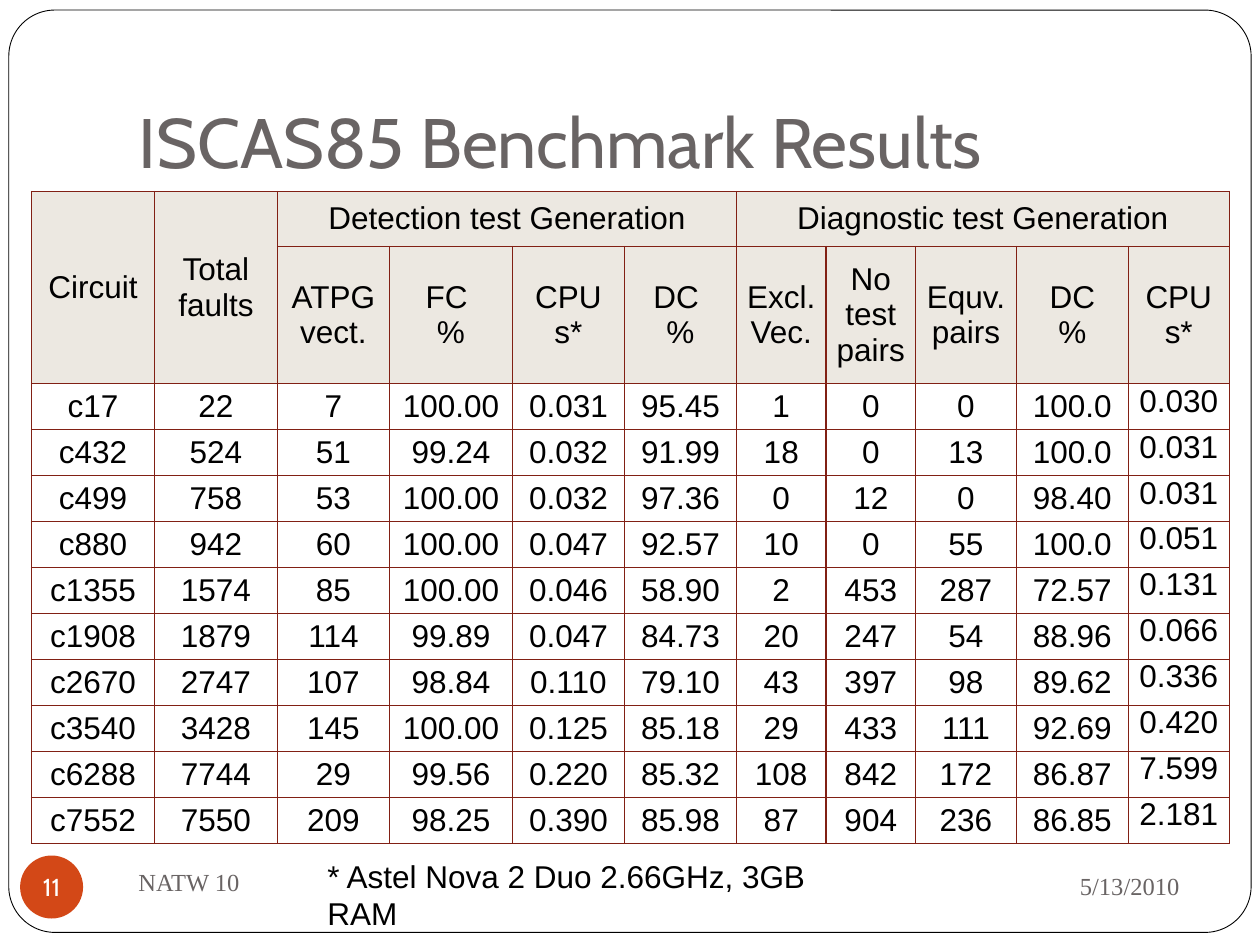
from pptx import Presentation
from pptx.dml.color import RGBColor
from pptx.enum.shapes import MSO_SHAPE
from pptx.enum.text import MSO_ANCHOR, PP_ALIGN
from pptx.oxml import parse_xml
from pptx.oxml.ns import nsdecls
from pptx.util import Emu, Pt

COLS, ROWS = 100, 75
WIDTHS = [9.76, 9.76, 8.89, 9.76, 8.89, 8.89, 7.11, 7.11, 8, 8.89, 8]
HEIGHTS = [4.37, 10.87] + [3.65] * 10
GROUPS = [
    (0, 0, 1, 0, "Circuit"),
    (0, 1, 1, 1, "Total\nfaults"),
    (0, 2, 0, 5, "Detection test Generation"),
    (0, 6, 0, 10, "Diagnostic test Generation"),
]
HEADS = ["ATPG\vvect.", "FC \n%", "CPU\ns*", "DC \n%", "Excl.\nVec.",
         "No test\npairs", "Equv.\npairs", "DC\n%", "CPU s*"]
RESULTS = """
c17 22 7 100.00 0.031 95.45 1 0 0 100.0 0.030
c432 524 51 99.24 0.032 91.99 18 0 13 100.0 0.031
c499 758 53 100.00 0.032 97.36 0 12 0 98.40 0.031
c880 942 60 100.00 0.047 92.57 10 0 55 100.0 0.051
c1355 1574 85 100.00 0.046 58.90 2 453 287 72.57 0.131
c1908 1879 114 99.89 0.047 84.73 20 247 54 88.96 0.066
c2670 2747 107 98.84 0.110 79.10 43 397 98 89.62 0.336
c3540 3428 145 100.00 0.125 85.18 29 433 111 92.69 0.420
c6288 7744 29 99.56 0.220 85.32 108 842 172 86.87 7.599
c7552 7550 209 98.25 0.390 85.98 87 904 236 86.85 2.181
"""


def paint(hue):
    return RGBColor.from_string(hue)


class Deck:
    gray, black, white = "696464", "000000", "FFFFFF"
    accent, rule, shade = "D34817", "812014", "ECE8E1"
    sans, serif, display = "Arial", "Times New Roman", "Cabin"

    def __init__(self):
        self.show = Presentation()
        self.show.slide_width = Emu(9144000)
        self.show.slide_height = Emu(6858000)
        self.slide = self.show.slides.add_slide(self.show.slide_layouts[5])
        self.shapes = self.slide.shapes

    def across(self, cols):
        return Emu(round(self.show.slide_width * cols / COLS))

    def down(self, rows):
        return Emu(round(self.show.slide_height * rows / ROWS))

    def box(self, left, top, width, height):
        return (self.across(left), self.down(top),
                self.across(width), self.down(height))

    def letter(self, frame, text, size, font, hue, align=PP_ALIGN.LEFT):
        frame.text = text
        for para in frame.paragraphs:
            para.alignment = align
            for run in para.runs:
                run.font.size = Pt(size)
                run.font.name = font
                run.font.color.rgb = paint(hue)

    def shape(self, kind, place, fill, line=None):
        item = self.shapes.add_shape(kind, *self.box(*place))
        item.shadow.inherit = False
        item.fill.solid()
        item.fill.fore_color.rgb = paint(fill)
        if line:
            item.line.color.rgb = paint(line)
            item.line.width = Pt(0.5)
        else:
            item.line.fill.background()
        return item

    def frame(self, place):
        item = self.shape(MSO_SHAPE.ROUNDED_RECTANGLE, place,
                          self.white, self.black)
        item.adjustments[0] = 0.05

    def title(self, place, text):
        item = self.shapes.title
        item.left, item.top, item.width, item.height = self.box(*place)
        frame = item.text_frame
        frame.word_wrap = True
        frame.vertical_anchor = MSO_ANCHOR.BOTTOM
        frame.margin_bottom = self.down(1)
        self.letter(frame, text, 40, self.display, self.gray)
        self.shapes._spTree.append(item._element)

    def label(self, place, text, size, font, hue, align=PP_ALIGN.LEFT,
              anchor=MSO_ANCHOR.MIDDLE, wrap=True):
        frame = self.shapes.add_textbox(*self.box(*place)).text_frame
        frame.word_wrap = wrap
        frame.vertical_anchor = anchor
        self.letter(frame, text, size, font, hue, align)

    def badge(self, place, text):
        frame = self.shape(MSO_SHAPE.OVAL, place, self.accent).text_frame
        frame.word_wrap = False
        frame.vertical_anchor = MSO_ANCHOR.MIDDLE
        frame.margin_left = frame.margin_right = 0
        frame.margin_top = frame.margin_bottom = 0
        self.letter(frame, text, 14, self.display, self.white, PP_ALIGN.CENTER)

    def style(self, cell, head, anchor):
        cell.margin_left = cell.margin_right = self.across(0.7)
        cell.margin_top = cell.margin_bottom = 0
        cell.vertical_anchor = anchor
        if head:
            cell.fill.solid()
            cell.fill.fore_color.rgb = paint(self.shade)
        else:
            cell.fill.background()
        props = cell._tc.get_or_add_tcPr()
        for spot, side in enumerate("LRTB"):
            props.insert(spot, parse_xml(
                f'<a:ln{side} {nsdecls("a")} w="{Pt(0.75)}"><a:solidFill>'
                f'<a:srgbClr val="{self.rule}"/></a:solidFill></a:ln{side}>'))

    def table(self, left, top, widths, heights, groups, heads, body):
        place = self.box(left, top, sum(widths), sum(heights))
        grid = self.shapes.add_table(len(heights), len(widths), *place).table
        grid.first_row = grid.horz_banding = False
        for col, width in zip(grid.columns, widths):
            col.width = self.across(width)
        for row, height in zip(grid.rows, heights):
            row.height = self.down(height)
        texts = {(r, c): text for r, c, _, _, text in groups}
        texts |= {(1, c): text for c, text in enumerate(heads, 2)}
        texts |= {(r, c): text for r, line in enumerate(body, 2)
                  for c, text in enumerate(line)}
        last = len(widths) - 1
        for r in range(len(heights)):
            for c in range(len(widths)):
                high = r > 1 and c == last
                self.style(grid.cell(r, c), r < 2,
                           MSO_ANCHOR.TOP if high else MSO_ANCHOR.MIDDLE)
        for (r, c), text in texts.items():
            self.letter(grid.cell(r, c).text_frame, text, 18,
                        self.sans, self.black, PP_ALIGN.CENTER)
        for r, c, bottom, right, _ in groups:
            grid.cell(r, c).merge(grid.cell(bottom, right))


def main():
    deck = Deck()
    deck.frame((0.7, 0.8, 98.6, 73.2))
    deck.title((10, 3, 85, 12.5), "ISCAS85 Benchmark Results")
    deck.label((67.5, 67.7, 27.1, 5.2), "5/13/2010", 14, deck.serif,
               deck.gray, PP_ALIGN.RIGHT)
    deck.label((10, 67.5, 43.3, 5), "NATW 10", 14, deck.serif, deck.gray)
    deck.badge((1.6, 67.9, 5, 5), "11")
    deck.table(2.5, 15.2, WIDTHS, HEIGHTS, GROUPS, HEADS,
               [line.split() for line in RESULTS.strip().splitlines()])
    deck.label((25, 67.5, 45.5, 4), "* Astel Nova 2 Duo 2.66GHz, 3GB RAM", 18,
               deck.sans, deck.black, anchor=MSO_ANCHOR.TOP, wrap=False)
    deck.show.save("out.pptx")


if __name__ == "__main__":
    main()
